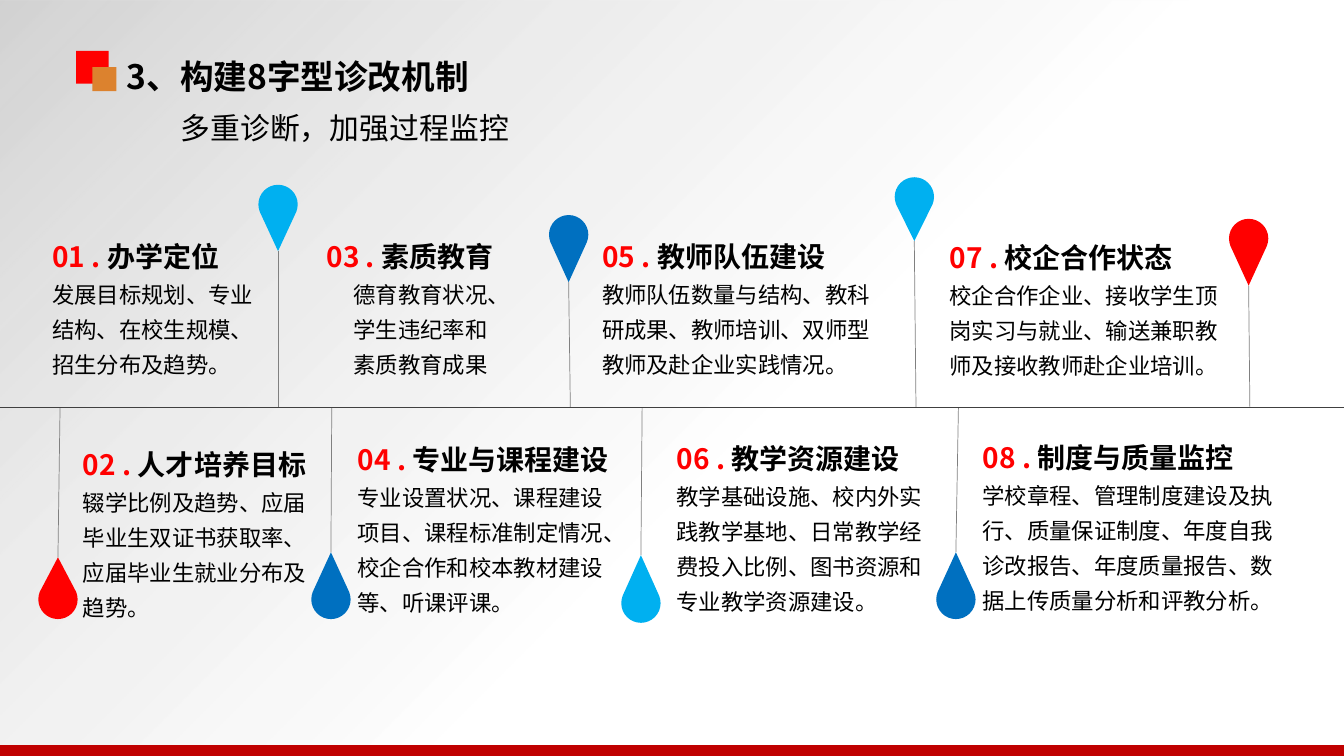
"""Build the slide on the eight-part diagnosis and reform scheme."""
from copy import deepcopy

from lxml import etree
from pptx import Presentation
from pptx.dml.color import RGBColor
from pptx.enum.shapes import MSO_CONNECTOR, MSO_SHAPE
from pptx.enum.text import MSO_ANCHOR, MSO_AUTO_SIZE, PP_ALIGN
from pptx.oxml.ns import qn
from pptx.util import Inches, Pt

RECT, LINE = MSO_SHAPE.RECTANGLE, MSO_CONNECTOR.STRAIGHT
LEFT, TOP, MIDDLE = PP_ALIGN.LEFT, MSO_ANCHOR.TOP, MSO_ANCHOR.MIDDLE
FIXED = MSO_AUTO_SIZE.NONE
COLS, ROWS = 160, 90
WIDE, HIGH = Inches(13.3333), Inches(7.5)
AXIS, HEAD = 48.5, 2.34
FACE = "Noto Sans CJK SC"
HUES = {"black": "000000", "red": "FF0000", "sky": "00B0F0", "blue": "0070C0",
        "orange": "DC822E", "maroon": "C00000", "grey": "808080", "dark": "404040",
        "ash": "A6A6A6", "mist": "D6D6D6", "white": "FFFFFF"}
FADE = [(0, "ash", 50), (0.27, "mist", 46), (0.57, "white", 45)]
FORMS = {"title": {"size": Pt(24), "bold": True},
         "sub": {"size": Pt(21.33), "bold": False},
         "head": {"size": Pt(20), "bold": True},
         "body": {"size": Pt(16), "bold": False}}
BEND = [(0.55, 0), (1, 0.45), (1, 1), (1, 1.13), (0.97, 1.25), (0.93, 1.37)]
PINS = [(33.1, 22, 29.9, 33.1, "sky"), (67.7, 25.6, 33.6, 67.9, "blue"),
        (108.85, 21.1, 28.7, 109.05, "sky"), (148.65, 26.05, 34, 148.8, "red"),
        (6.9, 73.7, 66.35, 7.15, "red"), (39.4, 73.7, 65.75, 39.5, "blue"),
        (76.3, 74.15, 66.1, 76.45, "sky"), (113.8, 73.7, 65.75, 114.1, "blue")]
PARTS = [
    (5.05, 27.8, 28.1, 0, "办学定位", ["发展目标规划、专业结构、在校生规模、招生分布及趋势。"]),
    (8.7, 52.5, 29.4, 0, "人才培养目标",
     ["辍学比例及趋势、应届毕业生双证书获取率、应届毕业生就业分布及趋势。"]),
    (37.7, 27.8, 25, 3.2, "素质教育", ["德育教育状况、", "学生违纪率和", "素质教育成果"]),
    (41.4, 51.9, 34.1, 0, "专业与课程建设",
     ["专业设置状况、课程建设项目、课程标准制定情况、校企合作和校本教材建设等、听课评课。"]),
    (70.5, 27.75, 34.8, 0, "教师队伍建设",
     ["教师队伍数量与结构、教科研成果、教师培训、双师型教师及赴企业实践情况。"]),
    (79.37, 51.8, 32.2, 0, "教学资源建设",
     ["教学基础设施、校内外实践教学基地、日常教学经费投入比例、图书资源和专业教学资源建设。"]),
    (111.87, 27.85, 35.9, 0, "校企合作状态",
     ["校企合作企业、接收学生顶岗实习与就业、输送兼职教师及接收教师赴企业培训。"]),
    (115.8, 51.65, 38.5, 0, "制度与质量监控",
     ["学校章程、管理制度建设及执行、质量保证制度、年度自我诊改报告、年度质量报告、数据上传质量分析和评教分析。"]),
]


def col(num):
    """Turn grid columns into a length."""
    return round(WIDE * num / COLS)


def row(num):
    """Turn grid rows into a length."""
    return round(HIGH * num / ROWS)


def hue(name):
    """Look up a named colour."""
    return RGBColor.from_string(HUES[name])


def apply(item, form):
    """Set each value of a format on an item."""
    for name, value in form.items():
        setattr(item, name, value)


def place(item, left, top, wide, high):
    """Move an item to its cells on the grid."""
    apply(item, {"left": col(left), "top": row(top),
                 "width": col(wide), "height": row(high)})


def frame(shape, anchor, side=0.1, edge=0.05):
    """Prepare the text frame of a shape."""
    apply(shape.text_frame, {
        "word_wrap": True, "auto_size": FIXED, "vertical_anchor": anchor,
        "margin_left": Inches(side), "margin_right": Inches(side),
        "margin_top": Inches(edge), "margin_bottom": Inches(edge)})
    return shape.text_frame


def write(para, text, form, shade="black"):
    """Add a formatted run to a paragraph."""
    run = para.add_run()
    run.text = text
    apply(run.font, {**FORMS[form], "name": FACE})
    run.font.color.rgb = hue(shade)
    etree.SubElement(run.font._element, qn("a:ea")).set("typeface", FACE)


def indent(para, size):
    """Set a plain left indent without a bullet."""
    props = para._p.get_or_add_pPr()
    props.set("marL", str(size))
    props.set("indent", "0")
    etree.SubElement(props, qn("a:buNone"))


def paint(shape, shade):
    """Fill a shape flat with one colour."""
    shape.shadow.inherit = False
    shape.fill.solid()
    shape.fill.fore_color.rgb = hue(shade)
    shape.line.fill.background()


def block(slide, shade, left, top, wide, high):
    """Draw a plain rectangle."""
    shape = slide.shapes.add_shape(RECT, col(left), row(top), col(wide), row(high))
    paint(shape, shade)
    return shape


def rule(slide, start, end, shade):
    """Draw a thin line between two grid points."""
    line = slide.shapes.add_connector(
        LINE, col(start[0]), row(start[1]), col(end[0]), row(end[1]))
    line.line.width = Pt(0.5)
    line.line.color.rgb = hue(shade)
    etree.SubElement(line._element.spPr, qn("a:effectLst"))


def curve(shape, starts):
    """Merge each run of three line points into one curve."""
    steps = list(shape._element.iter(qn("a:lnTo")))
    for start in starts:
        trio = steps[start:start + 3]
        bend = etree.Element(qn("a:cubicBezTo"))
        trio[0].addprevious(bend)
        for step in trio:
            bend.append(step[0])
            step.getparent().remove(step)


def pin(slide, mid, rim, tip, foot, shade):
    """Draw a drop whose tip is tied to the axis."""
    way = HEAD if tip > rim else -HEAD
    rule(slide, (mid, tip), (foot, AXIS), "grey")
    right = [(mid + HEAD * x, rim + way * y) for x, y in BEND]
    left = [(2 * mid - x, y) for x, y in reversed(right)]
    spots = [*right, (mid, tip), *left, (mid, rim)]
    draw = slide.shapes.build_freeform(col(mid), row(rim))
    draw.add_line_segments([(col(x), row(y)) for x, y in spots], close=True)
    drop = draw.convert_to_shape()
    curve(drop, (0, 3, 8, 11))
    paint(drop, shade)


def part(slide, num, left, top, wide, inset, head, lines):
    """Write one numbered part with its details."""
    high = 18 if num % 2 else 22.2
    box = slide.shapes.add_textbox(col(left), row(top), col(wide), row(high))
    text = frame(box, TOP)
    first = text.paragraphs[0]
    write(first, f"{num:02} . ", "head", "red")
    write(first, head, "head")
    for line in lines:
        para = text.add_paragraph()
        indent(para, col(inset))
        write(para, line, "body")
    for para in text.paragraphs:
        para.line_spacing = Pt(25)


def label(shape, cells, text, form, side, edge):
    """Move a placeholder and write its one line."""
    place(shape, *cells)
    para = frame(shape, MIDDLE, side, edge).paragraphs[0]
    apply(para, {"alignment": LEFT, "space_before": Pt(0)})
    indent(para, 0)
    write(para, text, form)


def fade(slide):
    """Lay a see-through grey fade behind everything."""
    sheet = block(slide, "white", 0, 0, COLS, ROWS)
    slide.shapes._spTree.insert(2, sheet._element)
    sheet.fill.gradient()
    sheet.fill.gradient_angle = 315
    first = sheet.fill.gradient_stops[0]._gs
    first.addnext(deepcopy(first))
    for stop, (spot, tone, share) in zip(sheet.fill.gradient_stops, FADE):
        stop.position = spot
        stop.color.rgb = hue(tone)
        etree.SubElement(stop._gs[0], qn("a:alpha")).set("val", str(share * 1000))


def main():
    """Build and save the slide."""
    deck = Presentation()
    apply(deck, {"slide_width": WIDE, "slide_height": HIGH})
    slide = deck.slides.add_slide(deck.slide_layouts[1])
    fade(slide)
    label(slide.shapes.title, (13.87, 6.1, 61.4, 6), "3、构建8字型诊改机制", "title", 0.1, 0.05)
    label(slide.placeholders[1], (21.5, 13.05, 42.6, 4.3), "多重诊断，加强过程监控", "sub", 0, 0)
    for spot in PINS:
        pin(slide, *spot)
    for num, item in enumerate(PARTS, 1):
        part(slide, num, *item)
    rule(slide, (0, AXIS), (COLS, AXIS), "dark")
    block(slide, "red", 9.05, 6.05, 3.9, 3.9)
    block(slide, "orange", 11, 8, 2.85, 2.85)
    block(slide, "maroon", 0, 88.7, COLS, 1.3)
    deck.save("out.pptx")


if __name__ == "__main__":
    main()
